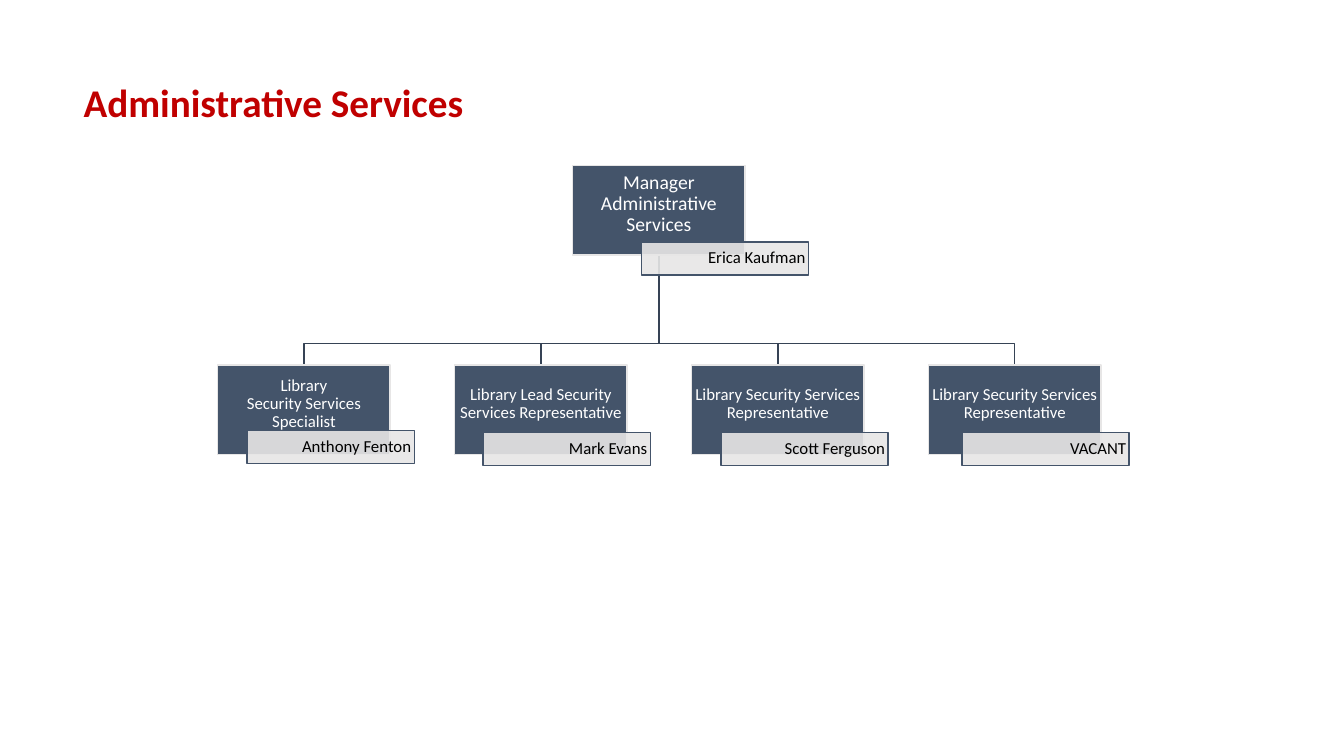
"""Build the Administrative Services organisation chart slide."""
from dataclasses import dataclass

from lxml import etree
from pptx import Presentation
from pptx.dml.color import RGBColor
from pptx.enum.shapes import MSO_SHAPE
from pptx.enum.text import MSO_ANCHOR, MSO_AUTO_SIZE, PP_ALIGN
from pptx.oxml.ns import qn
from pptx.util import Inches, Pt

RECTANGLE = MSO_SHAPE.RECTANGLE
MIDDLE = MSO_ANCHOR.MIDDLE
FIT_SHAPE = MSO_AUTO_SIZE.SHAPE_TO_FIT_TEXT
LEFT, CENTER, RIGHT = PP_ALIGN.LEFT, PP_ALIGN.CENTER, PP_ALIGN.RIGHT


@dataclass(frozen=True)
class Theme:
    font: str = "Calibri"
    title: RGBColor = RGBColor(0xC0, 0x00, 0x00)
    role: RGBColor = RGBColor(0x44, 0x54, 0x6A)
    tag: RGBColor = RGBColor(0xE7, 0xE6, 0xE6)
    branch: RGBColor = RGBColor(0x36, 0x43, 0x55)
    white: RGBColor = RGBColor(0xFF, 0xFF, 0xFF)
    black: RGBColor = RGBColor(0x00, 0x00, 0x00)
    title_size: Pt = Pt(28)
    manager_size: Pt = Pt(14)
    text_size: Pt = Pt(12)
    line_width: Pt = Pt(1)


theme = Theme()
ROLE_WIDTH, ROLE_HEIGHT = 1.71, 0.89
TAG_WIDTH, TAG_HEIGHT = 1.66, 0.33
MANAGER_LEFT, MANAGER_TOP = 5.68, 1.64
STAFF_LEFT, STAFF_TOP, STAFF_STEP = 2.16, 3.62, 2.35
BRANCH_Y = 3.41


def add_box(page, place, fill, outline, text, align, size, color, insets):
    box = page.shapes.add_shape(RECTANGLE, *map(Inches, place))
    box.shadow.inherit = False
    box.fill.solid()
    box.fill.fore_color.rgb = fill
    box.line.color.rgb = outline
    box.line.width = theme.line_width
    frame = box.text_frame
    frame.word_wrap = True
    frame.vertical_anchor = MIDDLE
    side, bottom = insets
    frame.margin_left = frame.margin_right = Inches(side)
    frame.margin_top, frame.margin_bottom = Inches(0.01), Inches(bottom)
    para = frame.paragraphs[0]
    para.text = text
    para.alignment = align
    para.line_spacing = 0.9
    para.font.name, para.font.size = theme.font, size
    para.font.color.rgb = color
    return box


def add_position(page, left, top, role, size, name, tag_left, tag_top):
    add_box(page, (left, top, ROLE_WIDTH, ROLE_HEIGHT), theme.role, theme.tag,
            role, CENTER, size, theme.white, (0.01, 0.13))
    tag = add_box(page, (tag_left, tag_top, TAG_WIDTH, TAG_HEIGHT), theme.tag, theme.role,
                  name, RIGHT, theme.text_size, theme.black, (0.03, 0.01))
    tag_color = tag.fill._xPr.find(qn("a:solidFill"))[0]
    etree.SubElement(tag_color, qn("a:alpha"), val="90000")


deck = Presentation()
deck.slide_width, deck.slide_height = Inches(13.33), Inches(7.5)
page = deck.slides.add_slide(deck.slide_layouts[5])

title = page.shapes.title
title.left, title.top = Inches(0.73), Inches(0.73)
title.width, title.height = Inches(4.21), Inches(0.57)
title.text_frame.word_wrap = True
title.text_frame.auto_size = FIT_SHAPE
title.text_frame.vertical_anchor = MIDDLE
heading = title.text_frame.paragraphs[0]
heading.text = "Administrative Services"
heading.alignment = LEFT
heading.font.name, heading.font.size = theme.font, theme.title_size
heading.font.bold = True
heading.font.color.rgb = theme.title

staff = [
    ("Library\vSecurity Services Specialist", "Anthony Fenton", 2.45, 4.27),
    ("Library Lead Security Services Representative", "Mark Evans", 4.79, 4.29),
    ("Library Security Services Representative", "Scott Ferguson", 7.15, 4.29),
    ("Library Security Services Representative", "VACANT", 9.54, 4.29),
]
staff_lefts = [STAFF_LEFT + index * STAFF_STEP for index in range(len(staff))]

trunk_x = Inches(MANAGER_LEFT + ROLE_WIDTH / 2)
for left in staff_lefts:
    staff_x = Inches(left + ROLE_WIDTH / 2)
    outline = page.shapes.build_freeform(trunk_x, Inches(MANAGER_TOP + ROLE_HEIGHT))
    outline.add_line_segments([(trunk_x, Inches(BRANCH_Y)), (staff_x, Inches(BRANCH_Y)),
                               (staff_x, Inches(STAFF_TOP))], close=False)
    branch = outline.convert_to_shape()
    branch.shadow.inherit = False
    branch.fill.background()
    branch.line.color.rgb = theme.branch
    branch.line.width = theme.line_width

add_position(page, MANAGER_LEFT, MANAGER_TOP, "Manager Administrative Services",
             theme.manager_size, "Erica Kaufman", 6.36, 2.4)
for left, (role, name, tag_left, tag_top) in zip(staff_lefts, staff):
    add_position(page, left, STAFF_TOP, role, theme.text_size, name, tag_left, tag_top)

deck.save("out.pptx")
